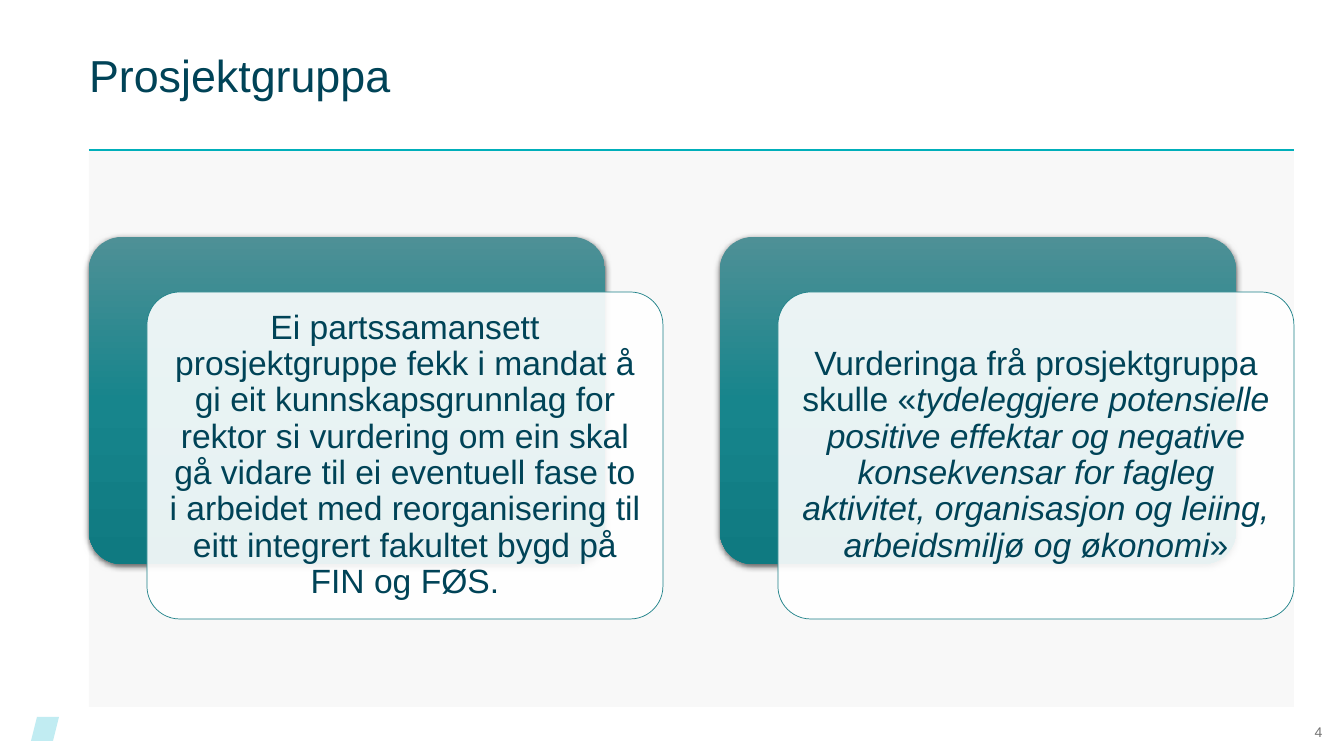
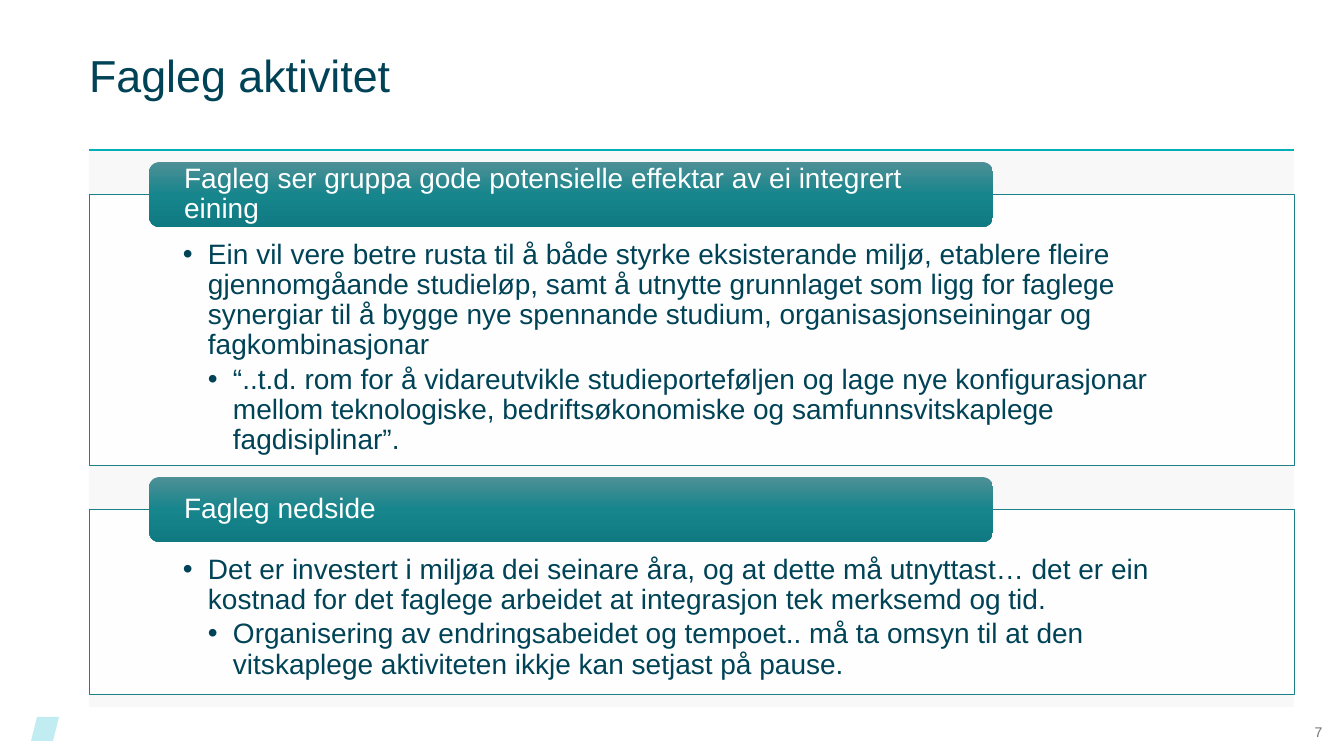
from lxml.etree import SubElement
from pptx import Presentation
from pptx.dml.color import RGBColor
from pptx.enum.shapes import MSO_CONNECTOR, MSO_SHAPE
from pptx.enum.text import MSO_ANCHOR, PP_ALIGN
from pptx.oxml.ns import qn
from pptx.util import Emu, Pt

# Shared geometry, in px
EMU_PER_PX = 914400 / 100.8
SLIDE_W, SLIDE_H = 1344, 756
BODY = (89, 150, 1205, 557)

# Shared colours and type
FONT = "Arial"
INK, WHITE, GREY = "004357", "FFFFFF", "737373"
BAND, RULE, MARK, OUTLINE = "F2F2F2", "00AFBA", "C1ECF2", "1C8087"
TEAL_STOPS = [(0, "4E9096"), (50, "17858C"), (100, "0F7A81")]


def px(length):
    return Emu(round(length * EMU_PER_PX))


def rgb(hex_colour):
    return RGBColor.from_string(hex_colour)


def add_xml(parent, tag, **attributes):
    return SubElement(parent, qn(tag), {k: str(v) for k, v in attributes.items()})


def add_block(slide, kind, box, colour=None, opacity=100, outline=None, radius=None):
    """Add a flat shape, or a teal gradient one when no colour is given."""
    block = slide.shapes.add_shape(kind, *map(px, box))
    block.shadow.inherit = False
    if radius is not None:
        block.adjustments[0] = radius
    if colour:
        block.fill.solid()
        block.fill.fore_color.rgb = rgb(colour)
        if opacity < 100:
            colour_xml = block._element.spPr.find(".//" + qn("a:srgbClr"))
            add_xml(colour_xml, "a:alpha", val=opacity * 1000)
    else:
        block.fill.gradient()
        block.fill.gradient_angle = 270
        stops = block._element.spPr.find(".//" + qn("a:gsLst"))
        stops.clear()
        for position, stop_colour in TEAL_STOPS:
            stop = add_xml(stops, "a:gs", pos=position * 1000)
            add_xml(stop, "a:srgbClr", val=stop_colour)
    if outline:
        block.line.color.rgb = rgb(outline)
        block.line.width = Pt(0.5)
    else:
        block.line.fill.background()
    return block


def add_soft_shadow(block):
    effects = block._element.spPr.find(qn("a:effectLst"))
    shadow = add_xml(effects, "a:outerShdw", blurRad=Pt(4.5), dist=Pt(1.5),
                     dir=5400000, algn="ctr", rotWithShape=0)
    add_xml(add_xml(shadow, "a:srgbClr", val="000000"), "a:alpha", val=63000)


def set_frame(shape, insets=(0, 0, 0, 0), anchor=MSO_ANCHOR.MIDDLE):
    frame = shape.text_frame
    frame.word_wrap = True
    frame.vertical_anchor = anchor
    (frame.margin_left, frame.margin_top,
     frame.margin_right, frame.margin_bottom) = map(px, insets)
    return frame


def write(paragraph, runs, size, colour=INK, align=PP_ALIGN.LEFT, spacing=None):
    """Fill a paragraph with (text, italic) runs."""
    paragraph.alignment = align
    paragraph.line_spacing = spacing
    for text, italic in runs:
        run = paragraph.add_run()
        run.text = text
        run.font.name, run.font.size = FONT, Pt(size)
        run.font.italic = italic
        run.font.color.rgb = rgb(colour)


def set_bullet(paragraph, level):
    properties = paragraph._p.get_or_add_pPr()
    properties.set("marL", str(px(25 * level)))
    properties.set("indent", str(px(-25)))
    add_xml(properties, "a:buFont", typeface=FONT)
    add_xml(properties, "a:buChar", char="•")


def add_base_slide(deck, title, number):
    """Title, body band, rule, corner mark and slide number."""
    slide = deck.slides.add_slide(deck.slide_layouts[5])
    left, top, width, _ = BODY

    # Body band and rule
    add_block(slide, MSO_SHAPE.RECTANGLE, BODY, BAND, opacity=50)
    rule = slide.shapes.add_connector(MSO_CONNECTOR.STRAIGHT, px(left), px(top),
                                      px(left + width), px(top))
    rule.line.color.rgb = rgb(RULE)
    rule.line.width = Pt(2)
    add_xml(rule._element.spPr, "a:effectLst")

    # Corner mark
    add_block(slide, MSO_SHAPE.PARALLELOGRAM, (31, 717, 28, 24), MARK)

    # Title
    heading = slide.shapes.title
    heading.left, heading.top, heading.width, heading.height = map(
        px, (left, 0, width, top - 1))
    write(set_frame(heading).paragraphs[0], [(title, False)], 32)

    # Slide number
    number_box = slide.shapes.add_textbox(*map(px, (1294, 707, 49, 49)))
    write(set_frame(number_box).paragraphs[0], [(number, False)], 10, GREY,
          PP_ALIGN.CENTER)
    return slide


def add_card(slide, box, runs):
    """A teal card with a text card laid over it, down and to the right."""
    left, top, width, height = box
    shift_x, shift_y = 58, 55
    size = (width - shift_x, height - shift_y)
    backing = add_block(slide, MSO_SHAPE.ROUNDED_RECTANGLE, (left, top, *size), radius=0.1)
    add_soft_shadow(backing)
    front = add_block(slide, MSO_SHAPE.ROUNDED_RECTANGLE,
                      (left + shift_x, top + shift_y, *size),
                      WHITE, opacity=90, outline=OUTLINE, radius=0.1)
    write(set_frame(front, (10, 10, 10, 10)).paragraphs[0], runs, 24,
          align=PP_ALIGN.CENTER, spacing=0.9)


def add_section(slide, box, label, points):
    """An outlined panel of nested points with a label across its top edge."""
    left, top, width, height = box
    label_height = 65
    panel_top = top + label_height // 2

    # Panel: each point is one level deeper than the last
    panel = add_block(slide, MSO_SHAPE.RECTANGLE,
                      (left, panel_top, width, height - label_height // 2),
                      WHITE, opacity=90, outline=OUTLINE)
    frame = set_frame(panel, (94, 46, 94, 16), MSO_ANCHOR.TOP)
    for level, point in enumerate(points, 1):
        paragraph = frame.paragraphs[0] if level == 1 else frame.add_paragraph()
        write(paragraph, [(point, False)], 20, spacing=0.9)
        paragraph.space_after = Pt(3)
        set_bullet(paragraph, level)

    # Label
    tab = add_block(slide, MSO_SHAPE.ROUNDED_RECTANGLE,
                    (left + 60, top, round(width * 0.7), label_height))
    write(set_frame(tab, (32, 0, 32, 0)).paragraphs[0], [(label, False)], 20,
          WHITE, spacing=0.9)


def build_cards_slide(deck, title, number, cards):
    slide = add_base_slide(deck, title, number)
    left, top, width, _ = BODY
    gap = 57
    card_width = (width - gap * (len(cards) - 1)) // len(cards)
    for index, runs in enumerate(cards):
        add_card(slide, (left + index * (card_width + gap), top + 87, card_width, 382), runs)


def build_sections_slide(deck, title, number, sections):
    slide = add_base_slide(deck, title, number)
    left, top, width, _ = BODY
    section_top = top + 12
    for height, label, points in sections:
        add_section(slide, (left, section_top, width, height), label, points)
        section_top += height + 12


def main():
    deck = Presentation()
    deck.slide_width, deck.slide_height = px(SLIDE_W), px(SLIDE_H)

    build_cards_slide(deck, "Prosjektgruppa", "4", [
        [("Ei partssamansett prosjektgruppe fekk i mandat å gi eit kunnskapsgrunnlag "
          "for rektor si vurdering om ein skal gå vidare til ei eventuell fase to i "
          "arbeidet med reorganisering til eitt integrert fakultet bygd på FIN og FØS.",
          False)],
        [("Vurderinga frå prosjektgruppa skulle «", False),
         ("tydeleggjere potensielle positive effektar og negative konsekvensar for "
          "fagleg aktivitet, organisasjon og leiing, arbeidsmiljø og økonomi", True),
         ("»", False)],
    ])

    build_sections_slide(deck, "Fagleg aktivitet", "7", [
        (303, "Fagleg ser gruppa gode potensielle effektar av ei integrert eining", [
            "Ein vil vere betre rusta til å både styrke eksisterande miljø, etablere "
            "fleire gjennomgåande studieløp, samt å utnytte grunnlaget som ligg for "
            "faglege synergiar til å bygge nye spennande studium, "
            "organisasjonseiningar og fagkombinasjonar",
            "“..t.d. rom for å vidareutvikle studieporteføljen og lage nye "
            "konfigurasjonar mellom teknologiske, bedriftsøkonomiske og "
            "samfunnsvitskaplege fagdisiplinar”.",
        ]),
        (217, "Fagleg nedside", [
            "Det er investert i miljøa dei seinare åra, og at dette må utnyttast… det "
            "er ein kostnad for det faglege arbeidet at integrasjon tek merksemd og tid.",
            "Organisering av endringsabeidet og tempoet.. må ta omsyn til at den "
            "vitskaplege aktiviteten ikkje kan setjast på pause.",
        ]),
    ])

    deck.save("out.pptx")


if __name__ == "__main__":
    main()
